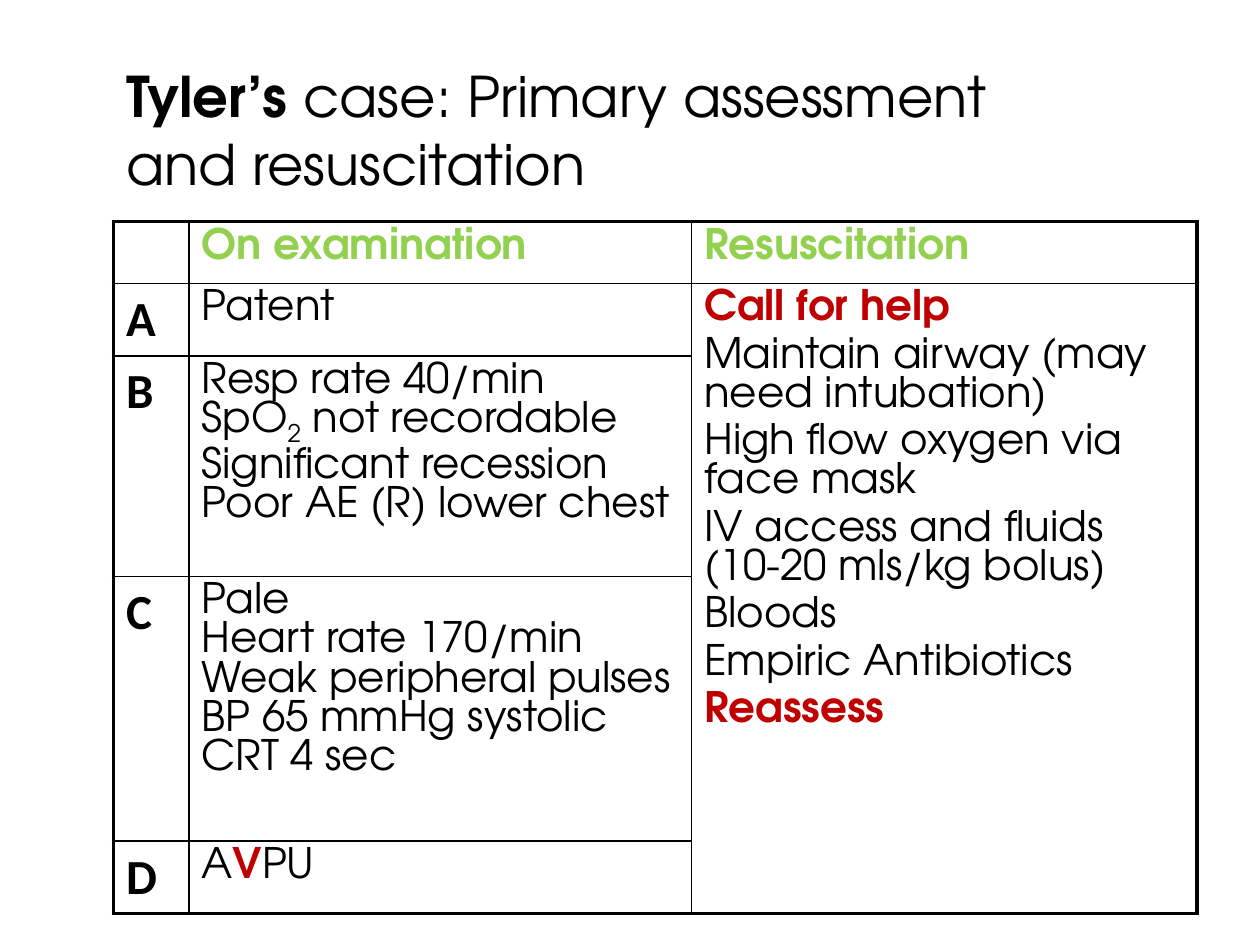
from lxml.etree import SubElement
from pptx import Presentation
from pptx.dml.color import RGBColor
from pptx.enum.text import MSO_ANCHOR, MSO_AUTO_SIZE, PP_ALIGN
from pptx.oxml.ns import qn
from pptx.util import Inches, Pt

COLORS = {"ink": "000000", "head": "92D050", "alert": "C00000"}
FONT = "TeX Gyre Adventor"
COLS = [0.6, 3.99, 4.01]
ROWS = [0.49, 0.57, 1.75, 2.1, 0.57]
HEADS = ["On examination", "Resuscitation"]
EXAMS = {
    "A": ["Patent"],
    "B": ["Resp rate 40/min",
          [("SpO", ""), ("2", "sub"), (" not recordable", "")],
          "Significant recession", "Poor AE (R) lower chest"],
    "C": ["Pale", "Heart rate 170/min", "Weak peripheral pulses",
          "BP 65 mmHg systolic", "CRT 4 sec"],
    "D": [[("A", ""), ("V", "alert"), ("PU", "")]],
}
STEPS = [
    [("Call for help", "alert")],
    "Maintain airway (may need intubation)",
    "High flow oxygen via face mask",
    "IV access and fluids (10-20 mls/kg bolus)",
    "Bloods",
    "Empiric Antibiotics",
    [("Reassess", "alert")],
]


def add_run(para, text, size, look="", face=FONT):
    run = para.add_run()
    run.text = text
    font = run.font
    font.name, font.size = face, Pt(size)
    font.bold = look in ("bold", "head", "alert")
    font.color.rgb = RGBColor.from_string(COLORS.get(look, COLORS["ink"]))
    if look == "sub":
        run._r.get_or_add_rPr().set("baseline", "-25000")


def fill_cell(cell, lines, size=24, face=FONT, gap=0):
    frame = cell.text_frame
    for i, line in enumerate(lines):
        para = frame.add_paragraph() if i else frame.paragraphs[0]
        para.space_before = Pt(gap if i else 0)
        runs = [(line, "")] if isinstance(line, str) else line
        for text, look in runs:
            add_run(para, text, size, look, face)


def set_edges(cell, row, col):
    outer = {"L": col == 0, "R": col == len(COLS) - 1,
             "T": row == 0, "B": row == len(ROWS) - 1}
    props = cell._tc.get_or_add_tcPr()
    for side, thick in outer.items():
        line = SubElement(props, qn(f"a:ln{side}"), w=str(Pt(2.25 if thick else 1)))
        fill = SubElement(line, qn("a:solidFill"))
        SubElement(fill, qn("a:srgbClr"), val=COLORS["ink"])
    cell.fill.background()


def add_title(slide, left, top, width, height):
    title = slide.shapes.title
    title.left, title.top = Inches(left), Inches(top)
    title.width, title.height = Inches(width), Inches(height)
    frame = title.text_frame
    frame.word_wrap = True
    frame.auto_size = MSO_AUTO_SIZE.NONE
    frame.vertical_anchor = MSO_ANCHOR.MIDDLE
    para = frame.paragraphs[0]
    para.alignment = PP_ALIGN.LEFT
    add_run(para, "Tyler’s ", 32, "bold")
    add_run(para, "case: Primary assessment and resuscitation", 32)


def add_grid(slide, left, top):
    table = slide.shapes.add_table(
        len(ROWS), len(COLS), Inches(left), Inches(top),
        Inches(sum(COLS)), Inches(sum(ROWS))).table
    table.first_row = table.horz_banding = False
    for col, width in zip(table.columns, COLS):
        col.width = Inches(width)
    for row, height in zip(table.rows, ROWS):
        row.height = Inches(height)
    for r in range(len(ROWS)):
        for c in range(len(COLS)):
            set_edges(table.cell(r, c), r, c)
    for c, head in enumerate(HEADS, 1):
        fill_cell(table.cell(0, c), [[(head, "head")]])
    for r, (mark, lines) in enumerate(EXAMS.items(), 1):
        fill_cell(table.cell(r, 0), [[(mark, "bold")]], 28, "Calibri")
        fill_cell(table.cell(r, 1), lines)
    steps = table.cell(1, 2)
    steps.merge(table.cell(len(ROWS) - 1, 2))
    base = steps._tc.tcPr.find(qn("a:lnB"))
    base.set("w", str(Pt(2.25)))
    fill_cell(steps, STEPS, gap=4.8)


def main():
    deck = Presentation()
    deck.slide_width, deck.slide_height = Inches(10), Inches(7.5)
    slide = deck.slides.add_slide(deck.slide_layouts[5])
    add_title(slide, 0.9, 0.3, 7.34, 1.45)
    add_grid(slide, 0.9, 1.76)
    deck.save("out.pptx")


if __name__ == "__main__":
    main()
